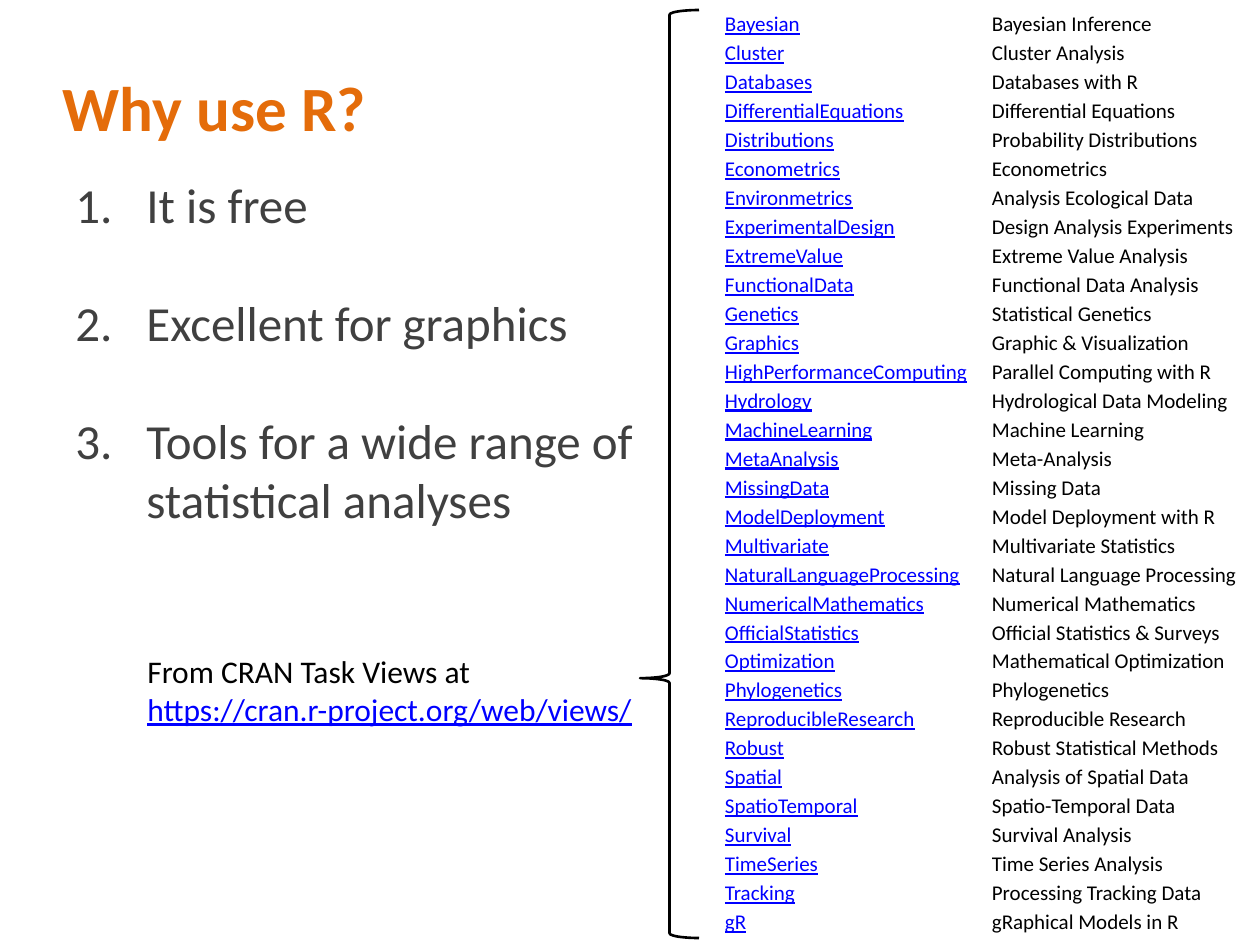
from typing import Any, NamedTuple

from lxml import etree
from pptx import Presentation
from pptx.dml.color import RGBColor
from pptx.enum.shapes import MSO_SHAPE
from pptx.enum.text import MSO_ANCHOR, MSO_AUTO_SIZE, PP_ALIGN
from pptx.oxml.ns import qn
from pptx.util import Pt

BRACE = MSO_SHAPE.LEFT_BRACE
TOP, MIDDLE = MSO_ANCHOR.TOP, MSO_ANCHOR.MIDDLE
GROW = MSO_AUTO_SIZE.SHAPE_TO_FIT_TEXT
LEFT = PP_ALIGN.LEFT

SCALE = 914400 / 126  # EMU in one px
FONT = "Calibri"
COLORS = {"title": "E46C0A", "list": "404040", "text": "000000", "link": "0000FF"}


class Box(NamedTuple):
    left: int
    top: int
    width: int
    height: int


class View(NamedTuple):
    name: str
    topic: str


REASONS = [
    "It is free",
    "Excellent for graphics",
    "Tools for a wide range of statistical analyses",
]

VIEWS = [
    View("Bayesian", "Bayesian Inference"),
    View("Cluster", "Cluster Analysis"),
    View("Databases", "Databases with R"),
    View("DifferentialEquations", "Differential Equations"),
    View("Distributions", "Probability Distributions"),
    View("Econometrics", "Econometrics"),
    View("Environmetrics", "Analysis Ecological Data"),
    View("ExperimentalDesign", "Design Analysis Experiments"),
    View("ExtremeValue", "Extreme Value Analysis"),
    View("FunctionalData", "Functional Data Analysis"),
    View("Genetics", "Statistical Genetics"),
    View("Graphics", "Graphic & Visualization"),
    View("HighPerformanceComputing", "Parallel Computing with R"),
    View("Hydrology", "Hydrological Data Modeling"),
    View("MachineLearning", "Machine Learning"),
    View("MetaAnalysis", "Meta-Analysis"),
    View("MissingData", "Missing Data"),
    View("ModelDeployment", "Model Deployment with R"),
    View("Multivariate", "Multivariate Statistics"),
    View("NaturalLanguageProcessing", "Natural Language Processing"),
    View("NumericalMathematics", "Numerical Mathematics"),
    View("OfficialStatistics", "Official Statistics & Surveys"),
    View("Optimization", "Mathematical Optimization"),
    View("Phylogenetics", "Phylogenetics"),
    View("ReproducibleResearch", "Reproducible Research"),
    View("Robust", "Robust Statistical Methods"),
    View("Spatial", "Analysis of Spatial Data"),
    View("SpatioTemporal", "Spatio-Temporal Data"),
    View("Survival", "Survival Analysis"),
    View("TimeSeries", "Time Series Analysis"),
    View("Tracking", "Processing Tracking Data"),
    View("gR", "gRaphical Models in R"),
]

ROW, COL = 29, 267
GRID = Box(721, 10, 2 * COL, ROW * len(VIEWS))


def px(size: int) -> int:
    return round(size * SCALE)


def put(item: Any, form: dict[str, Any]) -> None:
    for key, value in form.items():
        setattr(item, key, value)


def place(box: Box) -> list[int]:
    return [px(size) for size in box]


def write(para: Any, text: str, size: int, color: str, **form: Any) -> None:
    run = para.add_run()
    run.text = text
    put(run.font, {"name": FONT, "size": Pt(size), **form})
    run.font.color.rgb = RGBColor.from_string(COLORS[color])


def add_text(slide: Any, box: Box, wrap: bool) -> Any:
    frame = slide.shapes.add_textbox(*place(box)).text_frame
    put(frame, {"word_wrap": wrap, "auto_size": GROW})
    return frame


def add_title(slide: Any, box: Box, text: str) -> None:
    title = slide.shapes.title
    put(title, dict(zip(("left", "top", "width", "height"), place(box))))
    frame = title.text_frame
    put(frame, {"word_wrap": False, "auto_size": GROW, "vertical_anchor": TOP})
    para = frame.paragraphs[0]
    para.alignment = LEFT
    write(para, text, 36, "title", bold=True)


def add_list(slide: Any, box: Box, items: list[str]) -> None:
    frame = add_text(slide, box, True)
    for i, item in enumerate(items):
        para = frame.add_paragraph() if i else frame.paragraphs[0]
        para.space_before = Pt(34 if i else 0)
        write(para, item, 28, "list")
        props = para._p.get_or_add_pPr()
        props.set("marL", str(px(71)))
        props.set("indent", str(px(-71)))
        etree.SubElement(props, qn("a:buFont"), typeface="+mj-lt")
        etree.SubElement(props, qn("a:buAutoNum"), type="arabicPeriod")


def add_note(slide: Any, box: Box, lead: str, link: str) -> None:
    para = add_text(slide, box, False).paragraphs[0]
    write(para, lead, 18, "text")
    para.add_line_break()
    write(para, link, 18, "link", underline=True)


def fill_cell(cell: Any, text: str, color: str, line: bool) -> None:
    put(cell, {
        "margin_left": px(4), "margin_right": px(4),
        "margin_top": px(1), "margin_bottom": px(1),
        "vertical_anchor": MIDDLE,
    })
    cell.fill.background()
    write(cell.text_frame.paragraphs[0], text, 12, color, underline=line)


def add_views(slide: Any, box: Box, views: list[View]) -> None:
    table = slide.shapes.add_table(len(views), 2, *place(box)).table
    put(table, {"first_row": False, "horz_banding": False})
    for col in table.columns:
        col.width = px(COL)
    for i, view in enumerate(views):
        table.rows[i].height = px(ROW)
        fill_cell(table.cell(i, 0), view.name, "link", True)
        fill_cell(table.cell(i, 1), view.topic, "text", False)


def add_brace(slide: Any, box: Box) -> None:
    brace = slide.shapes.add_shape(BRACE, *place(box))
    brace.shadow.inherit = False
    brace.fill.background()
    brace.line.width = Pt(1.5)
    brace.line.color.rgb = RGBColor.from_string(COLORS["text"])
    brace.adjustments[0] = 0.08
    brace.adjustments[1] = 0.72


def main() -> None:
    deck = Presentation()
    put(deck, {"slide_width": px(1260), "slide_height": px(945)})
    slide = deck.slides.add_slide(deck.slide_layouts.get_by_name("Title Only"))

    # Reasons on the left
    add_title(slide, Box(50, 62, 331, 89), "Why use R?")
    add_list(slide, Box(63, 168, 638, 369), REASONS)

    # Task views on the right, with their source
    add_views(slide, GRID, VIEWS)
    add_note(slide, Box(135, 646, 517, 89),
             "From CRAN Task Views at", "https://cran.r-project.org/web/views/")
    add_brace(slide, Box(640, GRID.top, 59, GRID.height))

    deck.save("out.pptx")


if __name__ == "__main__":
    main()
